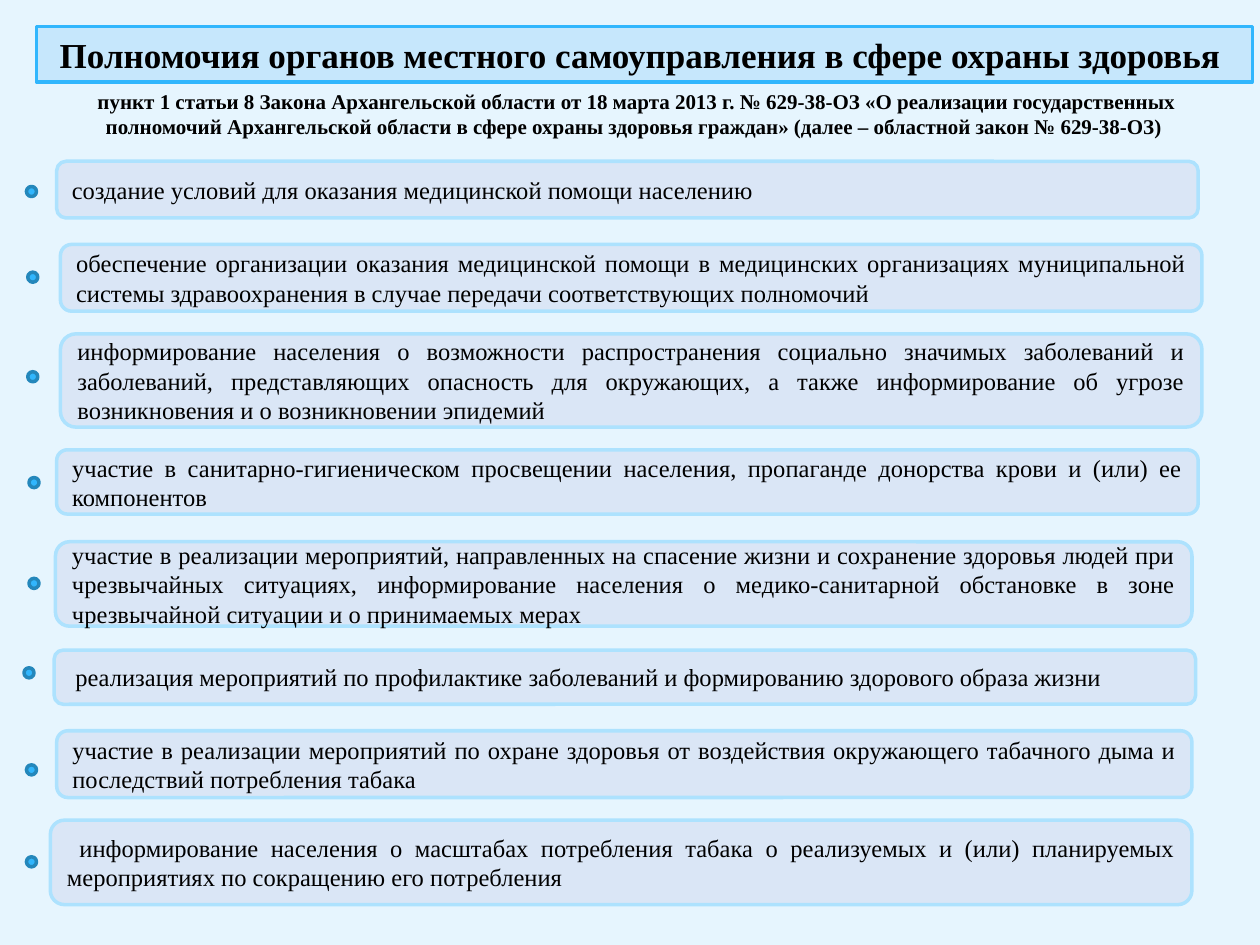
from pptx import Presentation
from pptx.dml.color import RGBColor
from pptx.enum.shapes import MSO_SHAPE as Shape
from pptx.enum.text import MSO_ANCHOR as Anchor, PP_ALIGN as Align
from pptx.util import Inches, Pt

FONT = "Times New Roman"
DOT_SIZE = 0.08
TITLE = "Полномочия органов местного самоуправления в сфере охраны здоровья "
SUBTITLE = (
    " пункт 1 статьи 8 Закона Архангельской области от 18 марта 2013 г. № 629-38-ОЗ "
    "«О реализации государственных полномочий Архангельской области в сфере охраны "
    "здоровья граждан» (далее – областной закон № 629-38-ОЗ)"
)
# Each row: box position and size, dot position, alignment, wording.
POWERS = [
    ((0.45, 1.28, 9.06, 0.45), (0.21, 1.48), Align.LEFT,
     "создание условий для оказания медицинской помощи населению"),
    ((0.48, 1.94, 9.06, 0.53), (0.22, 2.16), Align.JUSTIFY,
     "обеспечение организации оказания медицинской помощи в медицинских организациях "
     "муниципальной системы здравоохранения в случае передачи соответствующих полномочий"),
    ((0.48, 2.65, 9.06, 0.74), (0.22, 2.95), Align.JUSTIFY,
     "информирование населения о возможности распространения социально значимых "
     "заболеваний и заболеваний, представляющих опасность для окружающих, а также "
     "информирование об угрозе возникновения и о возникновении эпидемий"),
    ((0.45, 3.57, 9.06, 0.51), (0.23, 3.79), Align.JUSTIFY,
     "участие в санитарно-гигиеническом просвещении населения, пропаганде донорства "
     "крови и (или) ее компонентов"),
    ((0.44, 4.3, 9.02, 0.67), (0.23, 4.59), Align.JUSTIFY,
     "участие в реализации мероприятий, направленных на спасение жизни и сохранение "
     "здоровья людей при чрезвычайных ситуациях, информирование населения о "
     "медико-санитарной обстановке в зоне чрезвычайной ситуации и о принимаемых мерах"),
    ((0.43, 5.16, 9.06, 0.43), (0.19, 5.3), Align.JUSTIFY,
     " реализация мероприятий по профилактике заболеваний и формированию здорового "
     "образа жизни"),
    ((0.45, 5.8, 9.01, 0.53), (0.21, 6.07), Align.JUSTIFY,
     "участие в реализации мероприятий по охране здоровья от воздействия окружающего "
     "табачного дыма и последствий потребления табака"),
    ((0.4, 6.51, 9.06, 0.67), (0.21, 6.8), Align.JUSTIFY,
     " информирование населения о масштабах потребления табака о реализуемых и (или) "
     "планируемых мероприятиях по сокращению его потребления"),
]


def paint(fill, color):
    """Make a fill solid with a hex colour."""
    fill.solid()
    fill.fore_color.rgb = RGBColor.from_string(color)


def add_figure(page, kind, place, fill, line):
    """Add a flat preset shape with a 2 pt outline."""
    figure = page.shapes.add_shape(kind, *map(Inches, place))
    figure.shadow.inherit = False
    paint(figure.fill, fill)
    paint(figure.line.fill, line)
    figure.line.width = Pt(2)
    return figure


def write(box, text, size, align, bold=False):
    """Put one vertically centred paragraph into a box."""
    frame = box.text_frame
    frame.word_wrap = True
    frame.vertical_anchor = Anchor.MIDDLE
    para = frame.paragraphs[0]
    para.alignment = align
    span = para.add_run()
    span.text = text
    span.font.name = FONT
    span.font.size = Pt(size)
    span.font.bold = bold
    paint(span.font.fill, "000000")


def add_heading(page):
    """Add the title bar and the legal reference under it."""
    bar = add_figure(page, Shape.RECTANGLE, (0.29, 0.21, 9.65, 0.44), "C6E7FC", "31B6FD")
    write(bar, TITLE, 20, Align.CENTER, bold=True)
    box = page.shapes.add_textbox(*map(Inches, (0.27, 0.65, 9.53, 0.5)))
    write(box, SUBTITLE, 12, Align.CENTER, bold=True)


def add_power(page, place, dot, align, text):
    """Add one rounded box with its dot marker."""
    box = add_figure(page, Shape.ROUNDED_RECTANGLE, place, "DAE6F6", "ADE2FE")
    write(box, text, 14, align)
    add_figure(page, Shape.OVAL, (*dot, DOT_SIZE, DOT_SIZE), "31B6FD", "2487BB")


def main():
    """Build and save the slide."""
    deck = Presentation()
    deck.slide_width, deck.slide_height = Inches(10), Inches(7.5)
    page = deck.slides.add_slide(deck.slide_layouts[6])
    paint(page.background.fill, "E6F5FE")
    add_heading(page)
    for power in POWERS:
        add_power(page, *power)
    deck.save("out.pptx")


if __name__ == "__main__":
    main()
